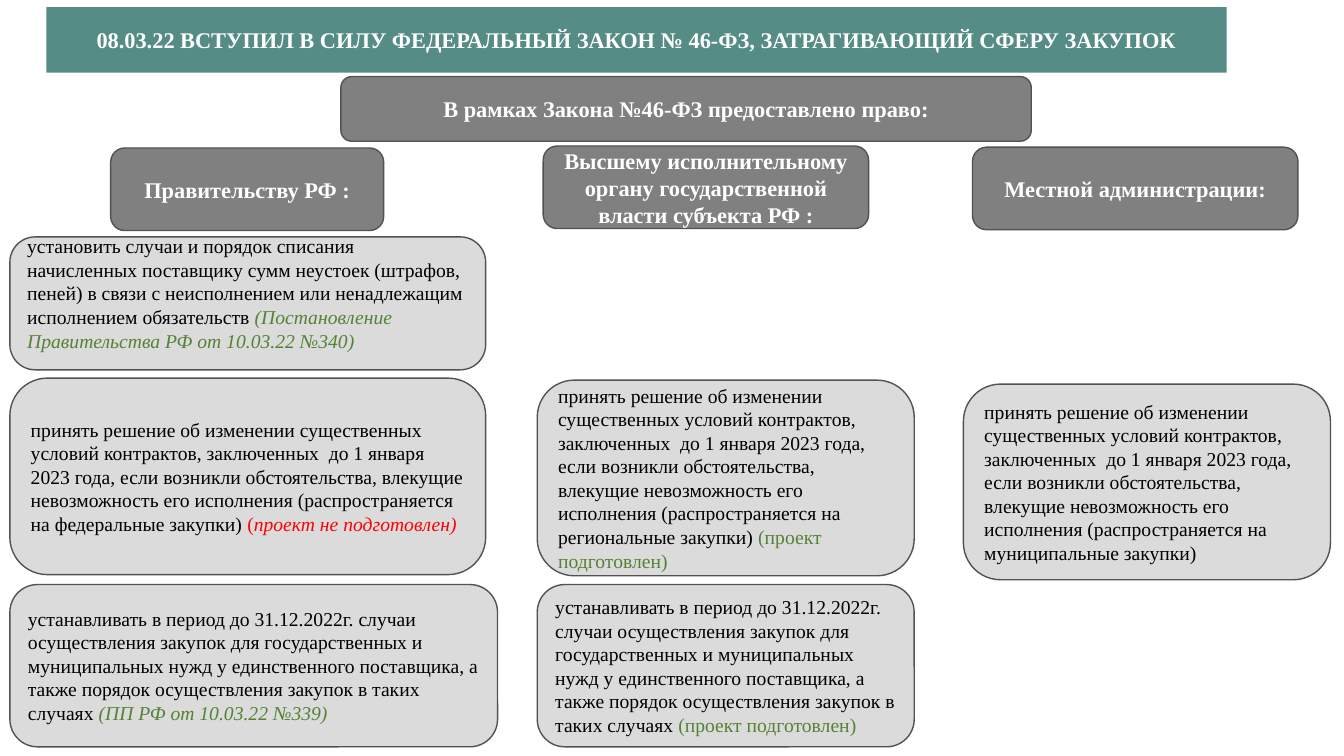
import pptx
import pptx.dml.color
import pptx.enum.shapes
import pptx.enum.text
import pptx.util
from lxml import etree

Cm = pptx.util.Cm
FONT = "Times New Roman"
WHITE, BLACK, GREEN, RED = "FFFFFF", "000000", "548235", "FF0000"
TEAL, GREY, PALE, EDGE = "568C86", "808080", "DBDBDB", "525252"
DRAWING = "http://schemas.openxmlformats.org/drawingml/2006/main"

WRITE_OFF = ("установить случаи и порядок списания начисленных поставщику сумм неустоек "
             "(штрафов, пеней) в связи с неисполнением или ненадлежащим исполнением обязательств ")
CHANGE_TERMS = ("принять решение об изменении существенных условий контрактов, заключенных  "
                "до 1 января 2023 года, если возникли обстоятельства, влекущие невозможность "
                "его исполнения (распространяется на {} закупки)")
SINGLE_SUPPLIER = ("устанавливать в период до 31.12.2022г. случаи осуществления закупок для "
                   "государственных и муниципальных нужд у единственного поставщика, а также "
                   "порядок осуществления закупок в таких случаях ")
READY = ("(проект подготовлен)", GREEN, False)

TITLE = "08.03.22 ВСТУПИЛ В СИЛУ ФЕДЕРАЛЬНЫЙ ЗАКОН № 46-ФЗ, ЗАТРАГИВАЮЩИЙ СФЕРУ ЗАКУПОК"
TITLE_PLACE = (1.17, 0.18, 29.74, 1.65)

# Text and place: left, top, width, height in cm
HEADINGS = [
    ("В рамках Закона №46-ФЗ предоставлено право:", (8.59, 1.93, 17.4, 1.63)),
    ("Правительству РФ :", (2.79, 3.73, 6.88, 2.08)),
    ("Высшему исполнительному органу государственной власти субъекта РФ :",
     (13.69, 3.68, 8.2, 2.08)),
    ("Местной администрации:", (24.51, 3.71, 8.2, 2.08)),
]

# Place, corner ratio, bottom margin in cm, spans of (text, colour, italic)
CARDS = [
    ((0.25, 5.97, 11.99, 3.35), 0.19, 0.64,
     [(WRITE_OFF, BLACK, False),
      ("(Постановление Правительства РФ от 10.03.22 №340)", GREEN, True)]),
    ((0.25, 9.53, 11.99, 4.95), 0.19, 0.13,
     [(CHANGE_TERMS.format("федеральные") + " ", BLACK, False),
      ("(", RED, False), ("проект не подготовлен)", RED, True)]),
    ((0.25, 14.73, 12.29, 4.09), 0.17, 0.13,
     [(SINGLE_SUPPLIER, BLACK, False), ("(ПП РФ от 10.03.22 №339)", GREEN, True)]),
    ((13.54, 9.58, 9.5, 4.93), 0.19, 0.13,
     [(CHANGE_TERMS.format("региональные") + " ", BLACK, False), READY]),
    ((13.54, 14.73, 9.5, 4.09), 0.17, 0.13, [(SINGLE_SUPPLIER, BLACK, False), READY]),
    ((24.28, 9.68, 9.25, 4.93), 0.19, 0.13,
     [(CHANGE_TERMS.format("муниципальные"), BLACK, False)]),
]


def paint(target, colour):
    """Set a fill, or the colour of a font, from a hex string."""
    if hasattr(target, "solid"):
        target.solid()
        target = target.fore_color
    else:
        target = target.color
    target.rgb = pptx.dml.color.RGBColor.from_string(colour)


def write(box, spans, size, bold, alignment):
    frame = box.text_frame
    frame.word_wrap = True
    frame.auto_size = pptx.enum.text.MSO_AUTO_SIZE.NONE
    frame.vertical_anchor = pptx.enum.text.MSO_ANCHOR.MIDDLE
    para = frame.paragraphs[0]
    para.alignment = alignment
    for text, colour, italic in spans:
        span = para.add_run()
        span.text = text
        span.font.name = FONT
        span.font.size = pptx.util.Pt(size)
        span.font.bold = bold
        span.font.italic = italic
        paint(span.font, colour)


def write_heading(box, text):
    write(box, [(text, WHITE, False)], 16, True, pptx.enum.text.PP_ALIGN.CENTER)


def add_rounded(page, place, fill, corner=0.17):
    box = page.shapes.add_shape(pptx.enum.shapes.MSO_SHAPE.ROUNDED_RECTANGLE,
                                *map(Cm, place))
    box.adjustments[0] = corner
    box.shadow.inherit = False
    paint(box.fill, fill)
    paint(box.line.fill, EDGE)
    box.line.width = pptx.util.Pt(1)
    return box


def add_title(page):
    """Turn the title placeholder into the rounded banner."""
    banner = page.shapes.title
    banner.left, banner.top, banner.width, banner.height = map(Cm, TITLE_PLACE)
    outline = etree.SubElement(banner.element.spPr, f"{{{DRAWING}}}prstGeom", prst="roundRect")
    etree.SubElement(outline, f"{{{DRAWING}}}avLst")
    paint(banner.fill, TEAL)
    write_heading(banner, TITLE)


def main():
    deck = pptx.Presentation()
    deck.slide_width, deck.slide_height = Cm(33.87), Cm(19.05)
    page = deck.slides.add_slide(deck.slide_layouts.get_by_name("Title Only"))
    add_title(page)
    for text, place in HEADINGS:
        write_heading(add_rounded(page, place, GREY), text)
    for place, corner, bottom, spans in CARDS:
        card = add_rounded(page, place, PALE, corner)
        write(card, spans, 14, False, pptx.enum.text.PP_ALIGN.LEFT)
        card.text_frame.margin_bottom = Cm(bottom)
    deck.save("out.pptx")


if __name__ == "__main__":
    main()
